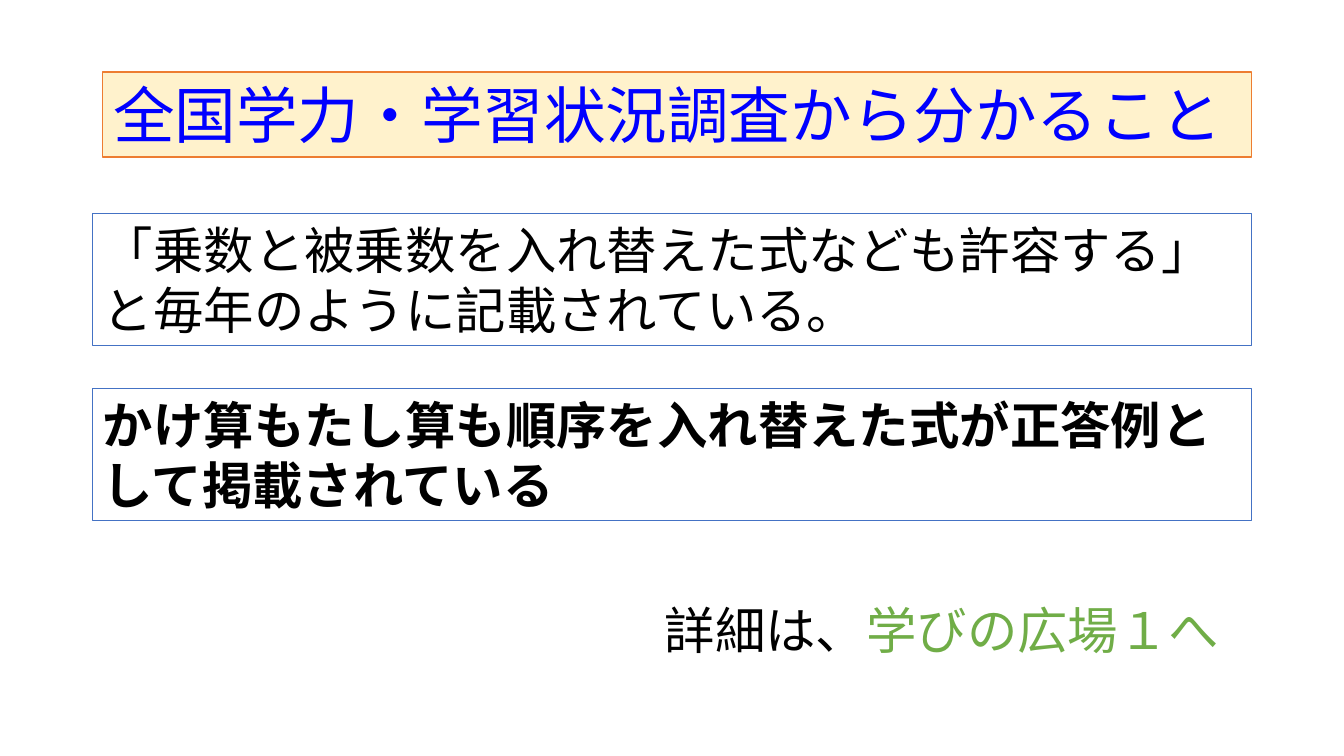
from dataclasses import dataclass

from pptx import Presentation
from pptx import util as u
from pptx.dml.color import RGBColor
from pptx.enum import shapes, text
from pptx.oxml.ns import qn
from lxml import etree

PX = 914400 / 100.8


def px(*nums):
    return [u.Emu(round(n * PX)) for n in nums]


@dataclass(frozen=True)
class Theme:
    face: str = "Noto Sans CJK JP"
    ink: str = "000000"
    title: str = "0000FF"
    cream: str = "FFF2CC"
    orange: str = "ED7D31"
    blue: str = "4472C4"
    green: str = "70AD47"
    head: int = 44
    body: int = 36
    rule: float = 0.75


class Page:
    def __init__(self, deck, theme):
        self.theme = theme
        self.slide = deck.slides.add_slide(deck.slide_layouts[5])

    def words(self, shape, runs, size, bold=False, align=text.PP_ALIGN.LEFT):
        """Fill a shape with one paragraph of (wording, colour) runs."""
        frame = shape.text_frame
        frame.word_wrap = True
        frame.auto_size = text.MSO_AUTO_SIZE.SHAPE_TO_FIT_TEXT
        frame.vertical_anchor = text.MSO_ANCHOR.TOP
        para = frame.paragraphs[0]
        para.alignment = align
        para.line_spacing = 1.0
        font = para.font
        font.name, font.size, font.bold = self.theme.face, u.Pt(size), bold
        # East Asian glyphs take their own typeface entry
        latin = para._p.pPr.find(qn("a:defRPr")).find(qn("a:latin"))
        east = etree.Element(qn("a:ea"), typeface=self.theme.face)
        latin.addnext(east)
        for wording, colour in runs:
            run = para.add_run()
            run.text = wording
            run.font.color.rgb = RGBColor.from_string(colour)

    def border(self, shape, colour):
        shape.line.color.rgb = RGBColor.from_string(colour)
        shape.line.width = u.Pt(self.theme.rule)

    def title(self, wording, box):
        t = self.theme
        shape = self.slide.shapes.title
        shape.left, shape.top, shape.width, shape.height = px(*box)
        shape.fill.solid()
        shape.fill.fore_color.rgb = RGBColor.from_string(t.cream)
        self.border(shape, t.orange)
        self.words(shape, [(wording, t.title)], t.head)

    def panel(self, wording, box, bold=False):
        t = self.theme
        shape = self.slide.shapes.add_shape(shapes.MSO_SHAPE.RECTANGLE, *px(*box))
        shape.shadow.inherit = False
        shape.fill.background()
        self.border(shape, t.blue)
        self.words(shape, [(wording, t.ink)], t.body, bold)

    def label(self, runs, box):
        shape = self.slide.shapes.add_textbox(*px(*box))
        self.words(shape, runs, self.theme.body, align=text.PP_ALIGN.RIGHT)


def main():
    deck = Presentation()
    deck.slide_width, deck.slide_height = px(1344, 756)
    theme = Theme()
    page = Page(deck, theme)

    # Heading
    page.title("全国学力・学習状況調査から分かること", (103, 72, 1149, 85))

    # Findings
    findings = [
        ("「乗数と被乗数を入れ替えた式なども許容する」と毎年のように記載されている。", False),
        ("かけ算もたし算も順序を入れ替えた式が正答例として掲載されている", True),
    ]
    for row, (wording, bold) in enumerate(findings):
        page.panel(wording, (93, 214 + 175 * row, 1159, 132), bold)

    # Where to read more
    page.label([("詳細は、", theme.ink), ("学びの広場１へ", theme.green)],
               (643, 594, 586, 72))

    deck.save("out.pptx")


if __name__ == "__main__":
    main()
